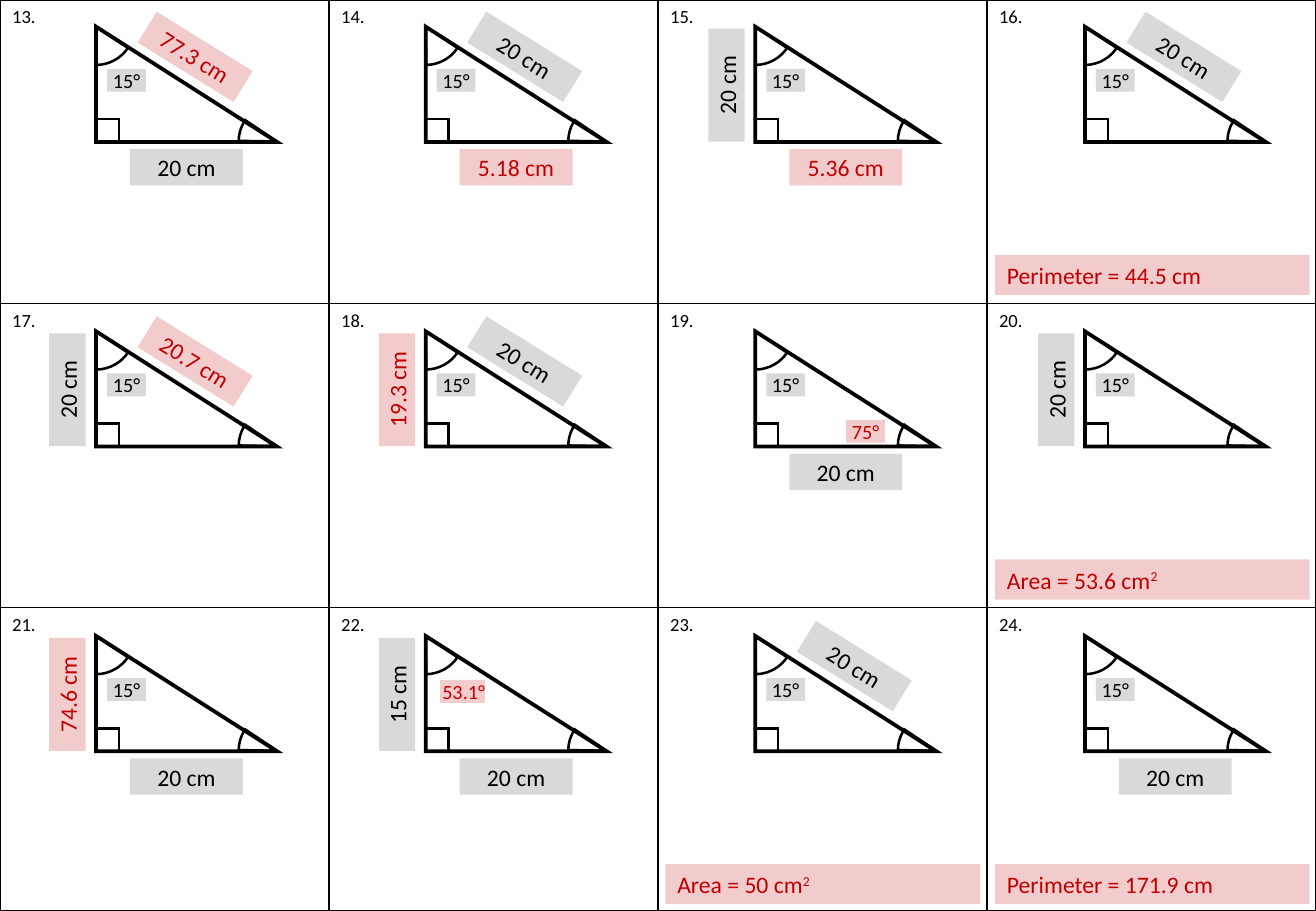
from lxml import etree
from pptx import Presentation
from pptx.dml.color import RGBColor
from pptx.enum import shapes, text
from pptx.oxml import ns
from pptx.util import Cm, Pt

# Labels of each triangle; a leading "!" marks an answer, "^" a superscript
CARDS = [
    {"base": "20 cm", "slope": "!77.3 cm", "top": "15°"},
    {"base": "!5.18 cm", "slope": "20 cm", "top": "15°"},
    {"base": "!5.36 cm", "side": "20 cm", "top": "15°"},
    {"slope": "20 cm", "top": "15°", "result": "!Perimeter = 44.5 cm"},
    {"slope": "!20.7 cm", "side": "20 cm", "top": "15°"},
    {"slope": "20 cm", "side": "!19.3 cm", "top": "15°"},
    {"base": "20 cm", "right": "!75°", "top": "15°"},
    {"side": "20 cm", "top": "15°", "result": "!Area = 53.6 cm^2"},
    {"base": "20 cm", "side": "!74.6 cm", "top": "15°"},
    {"base": "20 cm", "side": "15 cm", "wide": "!53.1°"},
    {"slope": "20 cm", "top": "15°", "result": "!Area = 50 cm^2"},
    {"base": "20 cm", "top": "15°", "result": "!Perimeter = 171.9 cm"},
]
FIRST, COLS, ROWS = 13, 4, 3
COLOURS = {"ink": "000000", "grey": "D9D9D9", "red": "C00000"}
FONT = "Calibri"
WIDTH, HEIGHT = 27.51, 19.05

# Triangle corner in the first cell and step to the next one, in cm
LEFT, TOP, STEP_X, STEP_Y = 2.01, 0.56, 6.89, 6.37

# Label places from the triangle corner: x, y, width, height, turn, size
MID, START, END = (text.PP_ALIGN.CENTER, text.PP_ALIGN.LEFT,
                   text.PP_ALIGN.RIGHT)
PLACES = {
    "base": (0.71, 2.56, 2.36, 0.76, 0, 14, MID),
    "slope": (0.89, 0.25, 2.36, 0.76, 31.8, 14, MID),
    "side": (-1.78, 0.84, 2.36, 0.76, 270, 14, MID),
    "top": (0.23, 0.88, 0.81, 0.48, 0, 12, MID),
    "wide": (0.3, 0.92, 0.94, 0.48, 0, 12, END),
    "right": (1.9, 1.85, 0.81, 0.48, 0, 12, MID),
    "result": (-1.88, 4.77, 6.58, 0.84, 0, 14, START),
}

# Outlines from the triangle corner: kind, x, y, width, height, line, angles
KIND = shapes.MSO_SHAPE
LINES = [
    (KIND.RIGHT_TRIANGLE, 0, 0, 3.78, 2.41, 2.25, ()),
    (KIND.RECTANGLE, 0, 1.93, 0.48, 0.48, 1.5, ()),
    (KIND.PIE, 2.98, 1.6, 1.6, 1.6, 1.5, (108.57, 128.35)),
    (KIND.PIE, -0.8, -0.8, 1.6, 1.6, 1.5, (20.21, 53.52)),
]


def tint(name):
    return RGBColor.from_string(COLOURS[name])


def write(para, words, size, colour, raised=False):
    run = para.add_run()
    run.text = words
    run.font.name, run.font.size = FONT, Pt(size)
    run.font.color.rgb = tint(colour)
    if raised:
        run.font._element.set("baseline", "30000")


def place(kind, x, y, w, h):
    shape = slide.shapes.add_shape(kind, Cm(x), Cm(y), Cm(w), Cm(h))
    shape.shadow.inherit = False
    return shape


def outline(left, top, kind, x, y, w, h, line, angles):
    shape = place(kind, left + x, top + y, w, h)
    shape.fill.background()
    shape.line.color.rgb = tint("ink")
    shape.line.width = Pt(line)
    edge = shape.line._get_or_add_ln()
    etree.SubElement(edge, ns.qn("a:miter"), lim="800000")
    for i, angle in enumerate(angles):
        shape.adjustments[i] = angle


def label(left, top, name, words):
    x, y, w, h, turn, size, align = PLACES[name]
    shape = place(KIND.RECTANGLE, left + x, top + y, w, h)
    shape.rotation = turn
    shape.line.fill.background()
    shape.fill.solid()
    answer = words.startswith("!")
    shape.fill.fore_color.rgb = tint("red" if answer else "grey")
    if answer:
        fill = shape._element.spPr.find(".//" + ns.qn("a:srgbClr"))
        etree.SubElement(fill, ns.qn("a:alpha"), val="20000")
    frame = shape.text_frame
    frame.word_wrap = True
    frame.vertical_anchor = text.MSO_ANCHOR.MIDDLE
    if size == 12:
        frame.margin_left = frame.margin_right = 0
    para = frame.paragraphs[0]
    para.alignment = align
    for i, part in enumerate(words.lstrip("!").split("^")):
        write(para, part, size, "red" if answer else "ink", i > 0)


def border(cell):
    props = cell._tc.get_or_add_tcPr()
    for side in ("lnL", "lnR", "lnT", "lnB"):
        line = etree.SubElement(props, ns.qn("a:" + side), w="12700")
        fill = etree.SubElement(line, ns.qn("a:solidFill"))
        etree.SubElement(fill, ns.qn("a:srgbClr"), val=COLOURS["ink"])


deck = Presentation()
deck.slide_width, deck.slide_height = Cm(WIDTH), Cm(HEIGHT)
slide = deck.slides.add_slide(deck.slide_layouts[6])

# Numbered grid
grid = slide.shapes.add_table(ROWS, COLS, 0, 0, Cm(WIDTH), Cm(HEIGHT)).table
grid.first_row = grid.horz_banding = False
for i in range(len(CARDS)):
    cell = grid.cell(*divmod(i, COLS))
    border(cell)
    cell.fill.background()
    write(cell.text_frame.paragraphs[0], f"{FIRST + i}.", 11, "ink")

# Triangles with their labels
for i, card in enumerate(CARDS):
    row, col = divmod(i, COLS)
    left, top = LEFT + col * STEP_X, TOP + row * STEP_Y
    for part in LINES:
        outline(left, top, *part)
    for name, words in card.items():
        label(left, top, name, words)

deck.save("out.pptx")
